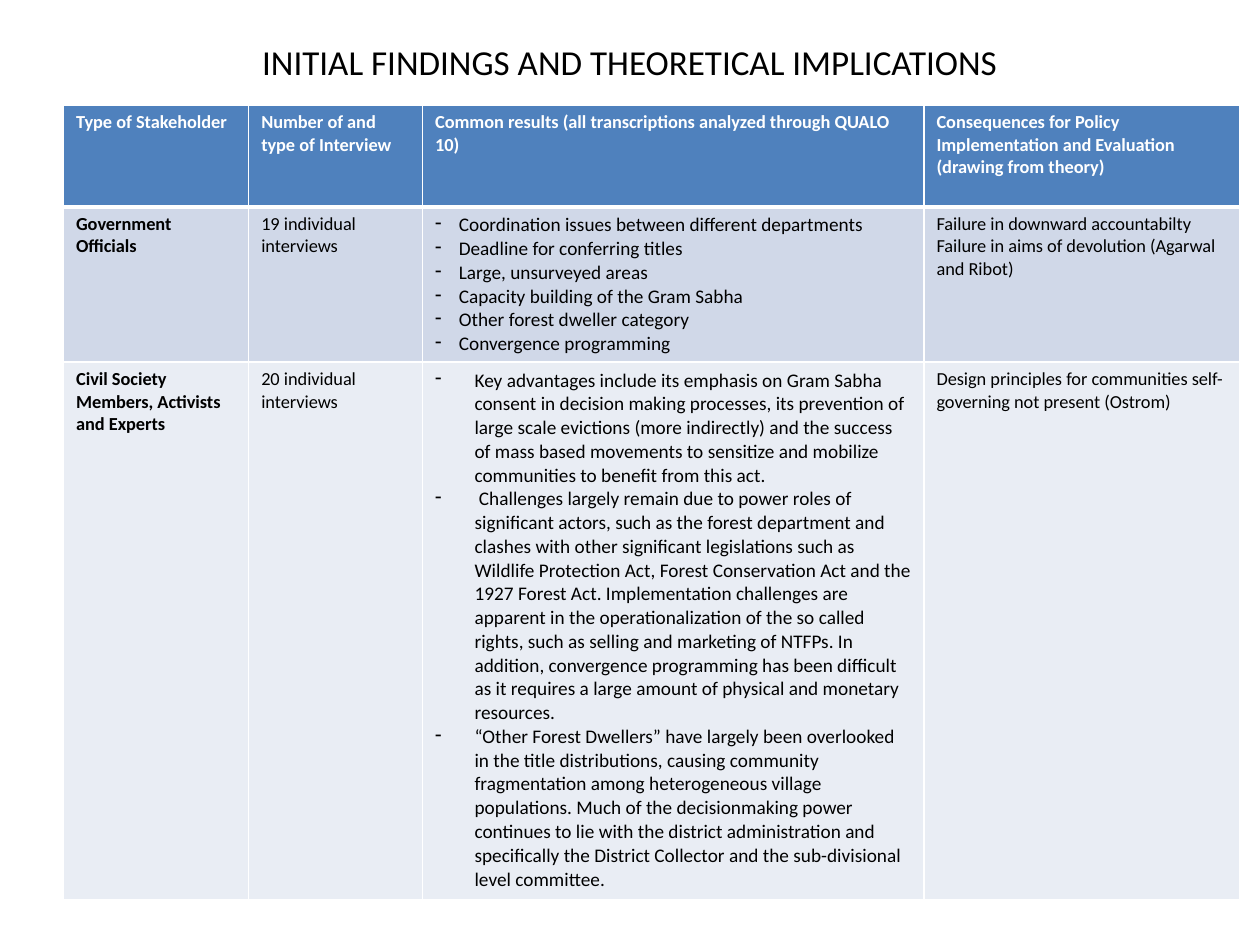
from lxml import etree
from pptx import Presentation
from pptx import util as u
from pptx.dml.color import RGBColor
from pptx.enum import text
from pptx.oxml import ns

WHITE = RGBColor(0xFF, 0xFF, 0xFF)
BLACK = RGBColor(0, 0, 0)
BLUE = RGBColor(0x4F, 0x81, 0xBD)
MIST = RGBColor(0xD0, 0xD8, 0xE8)
PALE = RGBColor(0xE9, 0xED, 0xF4)

COLS = [105.8, 99.4, 286.5, 180.5]
ROWS = [58.3, 88.2, 307]
FILLS = [BLUE, MIST, PALE]
DENTS = [0, 13.5, 22.5]  # hanging indent of the results list in each row
CELLS = [
    [
        ["Type of Stakeholder"],
        ["Number of and type of Interview"],
        ["Common results (all transcriptions analyzed through QUALO 10)"],
        ["Consequences for Policy Implementation and Evaluation (drawing from theory)"],
    ],
    [
        ["Government Officials"],
        ["19 individual interviews"],
        [
            "Coordination issues between different departments",
            "Deadline for conferring titles",
            "Large, unsurveyed areas",
            "Capacity building of the Gram Sabha",
            "Other forest dweller category",
            "Convergence programming",
        ],
        [
            "Failure in downward accountabilty",
            "Failure in aims of devolution (Agarwal and Ribot)",
        ],
    ],
    [
        ["Civil Society Members, Activists and Experts"],
        ["20 individual interviews"],
        [
            "Key advantages include its emphasis on Gram Sabha consent in decision "
            "making processes, its prevention of large scale evictions (more indirectly) "
            "and the success of mass based movements to sensitize and mobilize "
            "communities to benefit from this act.",
            " Challenges largely remain due to power roles of significant actors, such as "
            "the forest department and clashes with other significant legislations such "
            "as Wildlife Protection Act, Forest Conservation Act and the 1927 Forest Act. "
            "Implementation challenges are apparent in the operationalization of the so "
            "called rights, such as selling and marketing of NTFPs. In addition, "
            "convergence programming has been difficult as it requires a large amount of "
            "physical and monetary resources.",
            "“Other Forest Dwellers” have largely been overlooked in the title "
            "distributions, causing community fragmentation among heterogeneous village "
            "populations. Much of the decisionmaking power continues to lie with the "
            "district administration and specifically the District Collector and the "
            "sub-divisional level committee.",
        ],
        ["Design principles for communities self-governing not present (Ostrom)"],
    ],
]


def write(frame, lines, size=10.5, color=BLACK, bold=False, align=None, dent=0):
    """Fill a text frame, one paragraph a line; a dent makes a dash list."""
    for i, line in enumerate(lines):
        par = frame.paragraphs[0] if i == 0 else frame.add_paragraph()
        par.alignment = align
        run = par.add_run()
        run.text = line
        font = run.font
        font.name, font.size, font.bold = "Calibri", u.Pt(size), bold
        font.color.rgb = color
        if dent:
            props = par._p.get_or_add_pPr()
            props.set("marL", str(u.Pt(dent)))
            props.set("indent", str(-u.Pt(dent)))
            etree.SubElement(props, ns.qn("a:buChar"), char="-")


def edge(cell, side, width):
    props = cell._tc.get_or_add_tcPr()
    line = etree.SubElement(props, ns.qn("a:ln" + side), w=str(u.Pt(width)))
    fill = etree.SubElement(line, ns.qn("a:solidFill"))
    etree.SubElement(fill, ns.qn("a:srgbClr"), val=str(WHITE))


class Deck:
    def __init__(self):
        self.show = Presentation()
        self.show.slide_width, self.show.slide_height = u.Pt(720), u.Pt(540)
        self.slide = self.show.slides.add_slide(self.show.slide_layouts[5])

    def title(self, words, left, top, width, height):
        shape = self.slide.shapes.title
        shape.left, shape.top = u.Pt(left), u.Pt(top)
        shape.width, shape.height = u.Pt(width), u.Pt(height)
        shape.text_frame.vertical_anchor = text.MSO_ANCHOR.MIDDLE
        write(shape.text_frame, [words], size=20, align=text.PP_ALIGN.CENTER)

    def table(self, left, top):
        frame = self.slide.shapes.add_table(
            len(ROWS), len(COLS), u.Pt(left), u.Pt(top),
            u.Pt(sum(COLS)), u.Pt(sum(ROWS)))
        grid = frame.table
        for col, width in zip(grid.columns, COLS):
            col.width = u.Pt(width)
        for r, height in enumerate(ROWS):
            grid.rows[r].height = u.Pt(height)
            for c, lines in enumerate(CELLS[r]):
                self.cell(grid.cell(r, c), r, c, lines)

    def cell(self, cell, r, c, lines):
        head = r == 0
        for side in "LRTB":
            thick = (r, side) in ((0, "B"), (1, "T"))
            edge(cell, side, 3 if thick else 1)
        cell.fill.solid()
        cell.fill.fore_color.rgb = FILLS[r]
        dent = DENTS[r] if c == 2 else 0
        write(cell.text_frame, lines, size=11 if dent else 10.5,
              color=WHITE if head else BLACK, bold=head or c == 0, dent=dent)


def main():
    deck = Deck()
    deck.title("INITIAL FINDINGS AND THEORETICAL IMPLICATIONS", 36, 21.6, 648, 27)
    deck.table(36.3, 60)
    deck.show.save("out.pptx")


if __name__ == "__main__":
    main()
